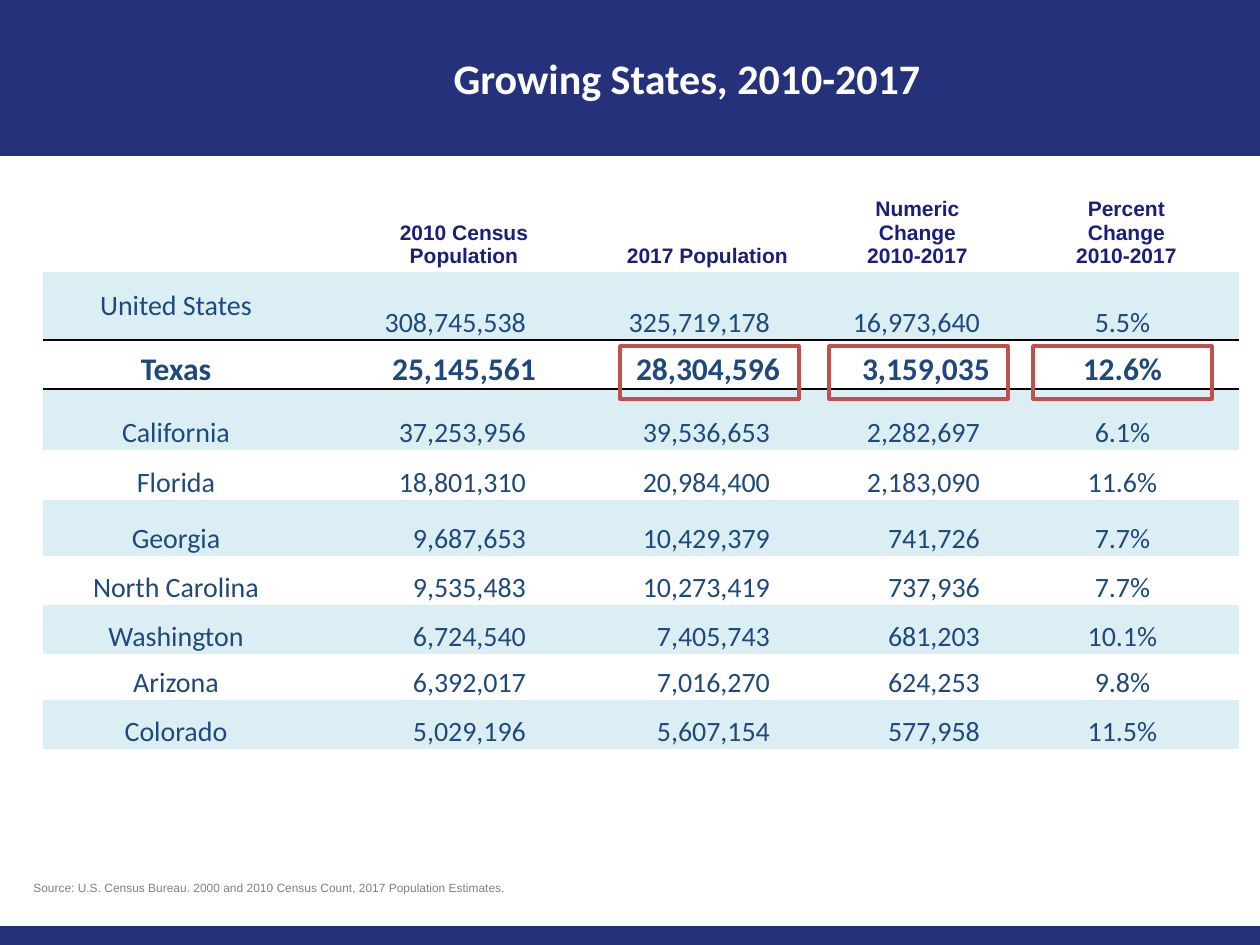
import pptx
import pptx.dml.color
import pptx.enum.shapes
import pptx.enum.text
import pptx.oxml
import pptx.oxml.ns
import pptx.util

PX = 914400 / 126
NAVY, HEADING, BLUE, STRIPE = "25327B", "1B1E7A", "1F497D", "DBEEF4"
ALIGN = pptx.enum.text.PP_ALIGN
ANCHOR = pptx.enum.text.MSO_ANCHOR
NO_STYLE = "{2D5ABB26-0587-4C30-8999-92F81FD0307C}"

COL_WIDTHS = [266, 277, 210, 210, 233]
ROW_HEIGHTS = [156, 68, 49, 61, 50, 56, 49, 49, 46, 49, 49]
HEADER_INDENTS = [0, 33, 33, 33, 8]
NUMBER_INSETS = {1: 60, 2: 26, 3: 26}
HEADERS = ["", "2010 Census\nPopulation", "2017 Population",
           "Numeric\nChange\n2010-2017", "Percent\nChange\n2010-2017"]
STATES = [
    ("United States", "308,745,538", "325,719,178", "16,973,640", "5.5%"),
    ("Texas", "25,145,561", "28,304,596", "3,159,035", "12.6%"),
    ("California", "37,253,956", "39,536,653", "2,282,697", "6.1%"),
    ("Florida", "18,801,310", "20,984,400", "2,183,090", "11.6%"),
    ("Georgia", "9,687,653", "10,429,379", "741,726", "7.7%"),
    ("North Carolina", "9,535,483", "10,273,419", "737,936", "7.7%"),
    ("Washington", "6,724,540", "7,405,743", "681,203", "10.1%"),
    ("Arizona", "6,392,017", "7,016,270", "624,253", "9.8%"),
    ("Colorado", "5,029,196", "5,607,154", "577,958", "11.5%"),
]


def px(n):
    return pptx.util.Emu(round(n * PX))


def rgb(color):
    return pptx.dml.color.RGBColor.from_string(color)


def write(tf, text, size, color, font="Calibri", bold=False, align=ALIGN.CENTER):
    for i, line in enumerate(text.split("\n")):
        p = tf.paragraphs[0] if i == 0 else tf.add_paragraph()
        p.alignment = align
        r = p.add_run()
        r.text = line
        r.font.size = pptx.util.Pt(size)
        r.font.name = font
        r.font.bold = bold
        r.font.color.rgb = rgb(color)


def add_rect(slide, box, fill=None, line=None):
    kind = pptx.enum.shapes.MSO_SHAPE.RECTANGLE
    sp = slide.shapes.add_shape(kind, *map(px, box))
    sp.shadow.inherit = False
    if fill:
        sp.fill.solid()
        sp.fill.fore_color.rgb = rgb(fill)
    else:
        sp.fill.background()
    if line:
        sp.line.color.rgb = rgb(line)
        sp.line.width = pptx.util.Pt(2)
    else:
        sp.line.fill.background()
    return sp


def add_bands(slide):
    """Draw the top and bottom bands behind the title."""
    for box in [(0, 926, 1260, 19), (0, 0, 1260, 156)]:
        band = add_rect(slide, box, fill=NAVY)
        slide.shapes._spTree.insert(2, band._element)


def set_title(slide, box, text):
    title = slide.shapes.title
    title.left, title.top, title.width, title.height = map(px, box)
    tf = title.text_frame
    tf.vertical_anchor = ANCHOR.MIDDLE
    write(tf, text, 24, "FFFFFF", bold=True)
    tf.paragraphs[0].line_spacing = 0.9


def set_margins(cell, left=0, top=0, right=0, bottom=0):
    cell.margin_left, cell.margin_top = px(left), px(top)
    cell.margin_right, cell.margin_bottom = px(right), px(bottom)


def add_rule(cell, side):
    """Give one side of a cell ("T" or "B") a black line."""
    ns = pptx.oxml.ns.nsdecls("a")
    ln = pptx.oxml.parse_xml(
        f'<a:ln{side} {ns} w="19050"><a:solidFill><a:srgbClr val="000000"/>'
        f'</a:solidFill></a:ln{side}>')
    cell._tc.get_or_add_tcPr().insert(0, ln)


def fill_header(table):
    for cell, text, indent in zip(table.rows[0].cells, HEADERS, HEADER_INDENTS):
        set_margins(cell, 8 + indent, 4, 8, 4)
        cell.vertical_anchor = ANCHOR.BOTTOM
        if text:
            write(cell.text_frame, text, 12, HEADING, font="Arial", bold=True)


def fill_state(table, row, values):
    texas = values[0] == "Texas"
    for col, value in enumerate(values):
        cell = table.cell(row, col)
        inset = NUMBER_INSETS.get(col, 0)
        set_margins(cell, right=inset - 10 if texas and inset else inset)
        middle = row == 1 and col == 0
        cell.vertical_anchor = ANCHOR.MIDDLE if middle else ANCHOR.BOTTOM
        write(cell.text_frame, value, 18 if texas else 16, BLUE, bold=texas,
              align=ALIGN.RIGHT if inset else ALIGN.CENTER)
        if row % 2:
            cell.fill.solid()
            cell.fill.fore_color.rgb = rgb(STRIPE)
        if row in (1, 2):
            add_rule(cell, "B" if row == 1 else "T")


def add_population_table(slide, left, top):
    box = (left, top, sum(COL_WIDTHS), sum(ROW_HEIGHTS))
    frame = slide.shapes.add_table(len(ROW_HEIGHTS), len(COL_WIDTHS), *map(px, box))
    table = frame.table
    table.first_row = table.horz_banding = False
    table._tbl.tblPr.find(pptx.oxml.ns.qn("a:tableStyleId")).text = NO_STYLE
    for column, width in zip(table.columns, COL_WIDTHS):
        column.width = px(width)
    for row, height in zip(table.rows, ROW_HEIGHTS):
        row.height = px(height)
    fill_header(table)
    for row, values in enumerate(STATES, start=1):
        fill_state(table, row, values)
    for cell in table.rows[len(ROW_HEIGHTS) - 1].cells:
        set_margins(cell)


def add_source(slide, box, text):
    tf = slide.shapes.add_textbox(*map(px, box)).text_frame
    tf.word_wrap = True
    write(tf, text, 6.8, "808080", font="Arial", align=ALIGN.LEFT)


def add_highlights(slide, lefts, top):
    for left in lefts:
        add_rect(slide, (left, top, 179, 53), line="C0504D")


def main():
    prs = pptx.Presentation()
    prs.slide_width, prs.slide_height = px(1260), px(945)
    slide = prs.slides.add_slide(prs.slide_layouts[5])
    add_bands(slide)
    set_title(slide, (262, 59, 850, 43), "Growing States, 2010-2017")
    add_population_table(slide, 43, 116)
    add_source(slide, (21, 874, 620, 42),
               "Source: U.S. Census Bureau. 2000 and 2010 Census Count, "
               "2017 Population Estimates.")
    add_highlights(slide, (620, 829, 1033), 346)
    prs.save("out.pptx")


if __name__ == "__main__":
    main()
